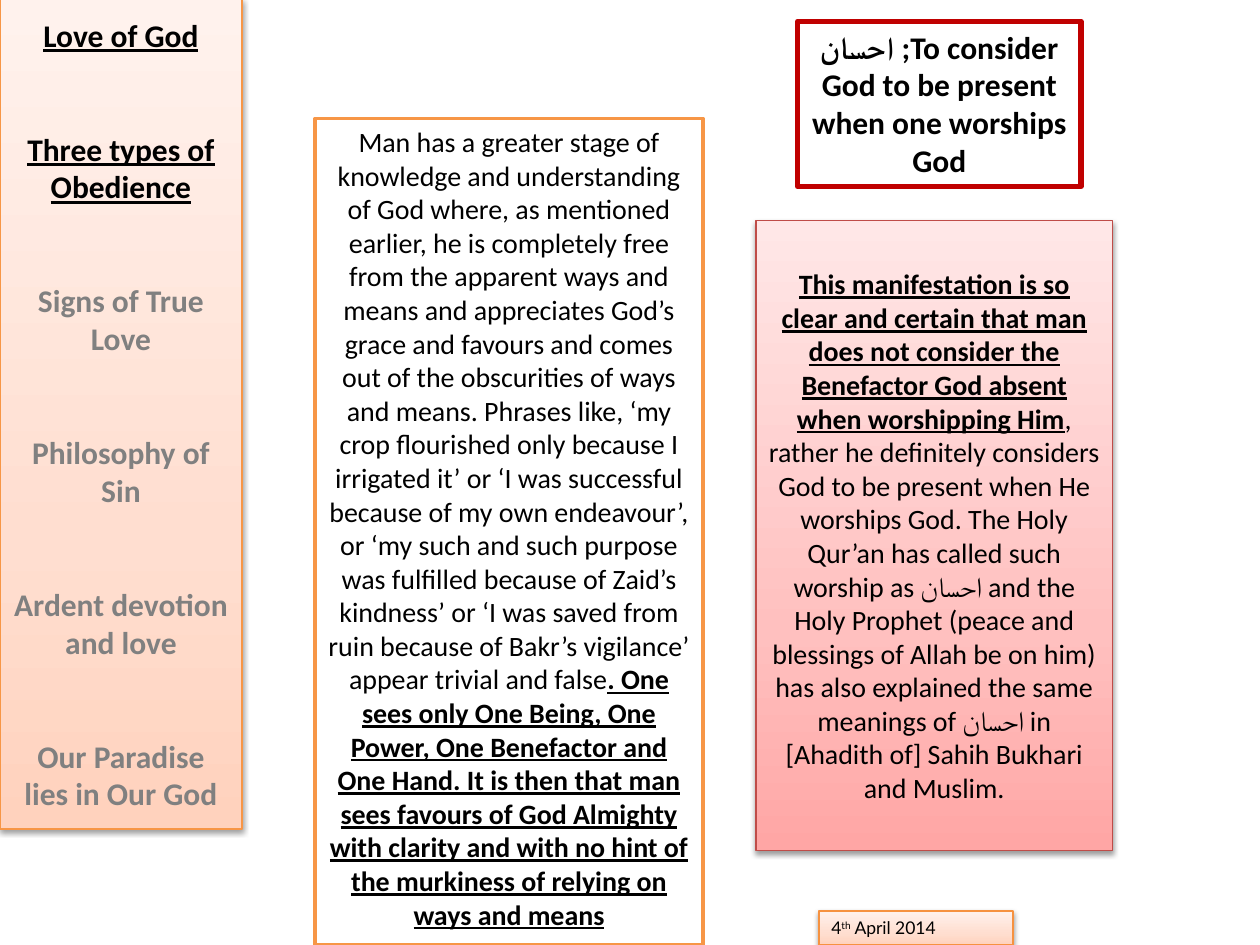
from lxml import etree
from copy import deepcopy
from pptx import Presentation
from pptx.dml.color import RGBColor
from pptx.enum.shapes import MSO_SHAPE
from pptx.enum.text import MSO_ANCHOR, PP_ALIGN
from pptx.oxml.ns import qn
from pptx.util import Inches, Pt

RECT = MSO_SHAPE.RECTANGLE
TOP, MIDDLE = MSO_ANCHOR.TOP, MSO_ANCHOR.MIDDLE
LEFT, CENTER = PP_ALIGN.LEFT, PP_ALIGN.CENTER

BLACK = RGBColor(0x00, 0x00, 0x00)
WHITE = RGBColor(0xFF, 0xFF, 0xFF)
GREY = RGBColor(0x80, 0x80, 0x80)
ORANGE = RGBColor(0xF7, 0x96, 0x46)
DATE_ORANGE = RGBColor(0xF6, 0x92, 0x40)
RED = RGBColor(0xBF, 0x4C, 0x48)
DARK_RED = RGBColor(0xC0, 0x00, 0x00)
# Gradient colours run from the bottom of the box to its top
PEACH = [RGBColor(0xFF, 0xD2, 0xBD), RGBColor(0xFF, 0xDE, 0xD0), RGBColor(0xFF, 0xF2, 0xED)]
PINK = [RGBColor(0xFF, 0xA6, 0xA5), RGBColor(0xFF, 0xC0, 0xBF), RGBColor(0xFF, 0xE7, 0xE7)]
STOPS = [0, 0.35, 1]


def add_box(x, y, w, h, line, width, gradient=None, anchor=TOP):
    """Add a white box, or a shadowed one when gradient colours are given."""
    sp = s.shapes.add_shape(RECT, Inches(x), Inches(y), Inches(w), Inches(h))
    sp.shadow.inherit = False
    sp.line.color.rgb = line
    sp.line.width = Pt(width)
    if gradient:
        sp.fill.gradient()
        sp.fill.gradient_angle = 90
        stop_list = sp._element.spPr.find(".//" + qn("a:gsLst"))
        stop_list.append(deepcopy(stop_list[-1]))
        for stop, position, color in zip(sp.fill.gradient_stops, STOPS, gradient):
            stop.position = position
            stop.color.rgb = color
        effects = sp._element.spPr.find(qn("a:effectLst"))
        shadow = etree.SubElement(effects, qn("a:outerShdw"), blurRad="40000",
                                  dist="20000", dir="5400000", rotWithShape="0")
        black = etree.SubElement(shadow, qn("a:srgbClr"), val="000000")
        etree.SubElement(black, qn("a:alpha"), val="38000")
    else:
        sp.fill.solid()
        sp.fill.fore_color.rgb = WHITE
    sp.text_frame.word_wrap = True
    sp.text_frame.vertical_anchor = anchor
    return sp.text_frame


def add_run(p, text, size, bold=False, underline=False, color=BLACK, font="Calibri"):
    r = p.add_run()
    r.text = text
    r.font.name = font
    r.font.size = Pt(size)
    r.font.bold = bold
    r.font.underline = underline
    r.font.color.rgb = color
    return r


prs = Presentation()
prs.slide_width, prs.slide_height = Inches(10), Inches(7.5)
s = prs.slides.add_slide(prs.slide_layouts[6])

# Topic sidebar: topics already reached are black and underlined
topics = [
    ("Love of God", True),
    ("Three types of Obedience", True),
    ("Signs of True Love", False),
    ("Philosophy of Sin", False),
    ("Ardent devotion and love", False),
    ("Our Paradise lies in Our God", False),
]
tf = add_box(0, -0.01, 1.92, 6.59, ORANGE, 0.75, PEACH, MIDDLE)
for i, (topic, reached) in enumerate(topics):
    p = tf.add_paragraph() if i else tf.paragraphs[0]
    p.alignment = CENTER
    if i:
        p.space_before = Pt(43.5)
    add_run(p, topic, 18, True, reached, BLACK if reached else GREY)

# Date
tf = add_box(6.5, 7.23, 1.54, 0.27, DATE_ORANGE, 0.75, PEACH)
tf.word_wrap = False
p = tf.paragraphs[0]
p.alignment = LEFT
add_run(p, "4", 10, font="Lato")
suffix = add_run(p, "th", 10, font="Lato")
suffix.font._element.set("baseline", "30000")
add_run(p, " April 2014", 10, font="Lato")

# Stage of knowledge
p = add_box(2.5, 0.94, 3.08, 6.56, ORANGE, 2).paragraphs[0]
p.alignment = CENTER
add_run(p, "Man has a greater stage of knowledge and understanding of God where, as "
           "mentioned earlier, he is completely free from the apparent ways and means and "
           "appreciates God’s grace and favours and comes out of the obscurities of ways "
           "and means. Phrases like, ‘my crop flourished only because I irrigated it’ or "
           "‘I was successful because of my own endeavour’, or ‘my such and such purpose "
           "was fulfilled because of Zaid’s kindness’ or ‘I was saved from ruin because of "
           "Bakr’s vigilance’ appear trivial and false", 16)
add_run(p, ". One sees only One Being, One Power, One Benefactor and One Hand. It is then "
           "that man sees favours of God Almighty with clarity and with no hint of the "
           "murkiness of relying on ways and means", 16, True, True)

# Manifestation
p = add_box(6, 1.75, 2.83, 5, RED, 0.75, PINK, MIDDLE).paragraphs[0]
p.alignment = CENTER
add_run(p, "This manifestation is so clear and certain that man does not consider the "
           "Benefactor God absent when worshipping Him", 16, True, True)
add_run(p, ", rather he definitely considers God to be present when He worships God. The "
           "Holy Qur’an has called such worship as احسان and the Holy Prophet (peace and "
           "blessings of Allah be on him) has also explained the same meanings of احسان in "
           "[Ahadith of] Sahih Bukhari and Muslim.", 16)

# Definition
p = add_box(6.33, 0.17, 2.25, 1.31, DARK_RED, 3).paragraphs[0]
p.alignment = CENTER
add_run(p, "احسان ;To consider God to be present when one worships God", 18, True)

prs.save("out.pptx")
